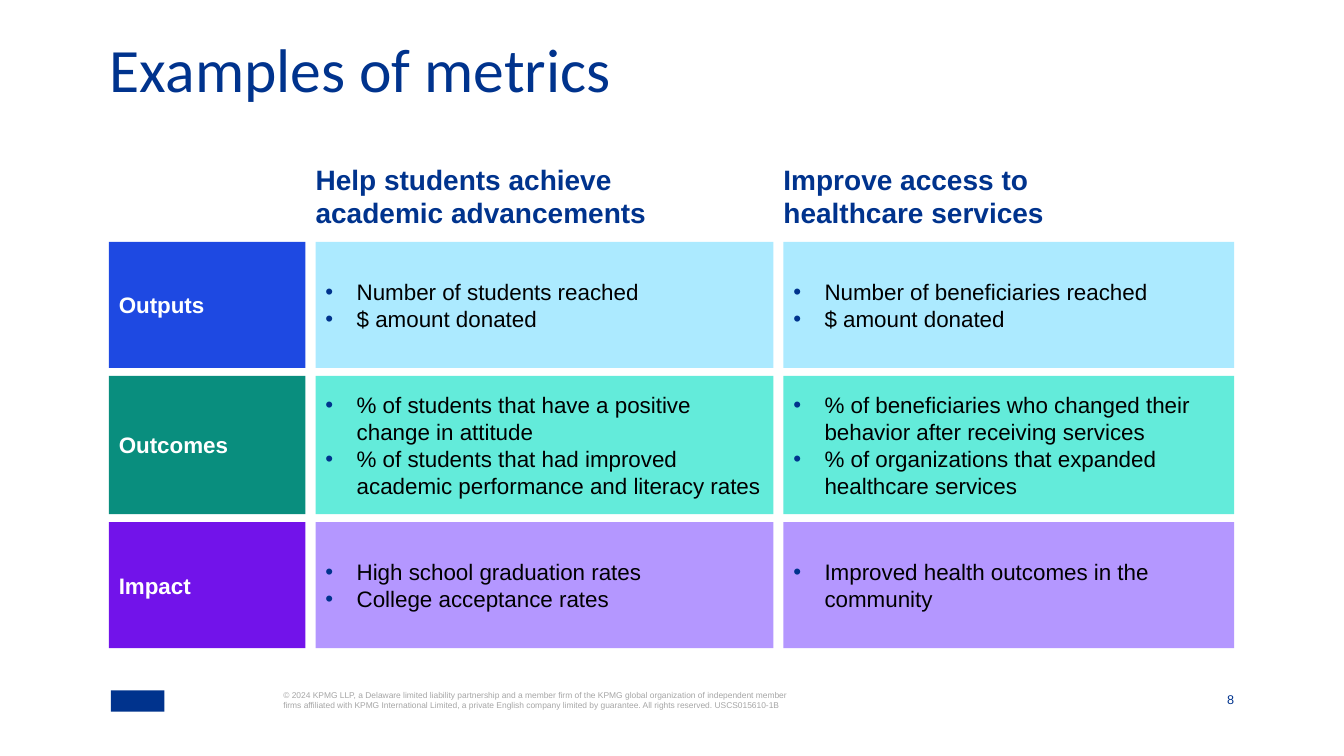
from lxml.etree import SubElement
from pptx import Presentation
from pptx.dml.color import RGBColor
from pptx.enum.shapes import MSO_SHAPE
from pptx.enum.text import MSO_ANCHOR, MSO_AUTO_SIZE, PP_ALIGN
from pptx.oxml.ns import qn
from pptx.util import Inches, Pt

COLORS = {
    "navy": "00338D", "grey": "A6A6A6", "white": "FFFFFF", "black": "000000",
    "blue": "1E49E2", "pale blue": "ACEAFF",
    "teal": "098E7E", "pale teal": "63EBDA",
    "purple": "7213EA", "pale purple": "B497FF",
}
STYLES = {
    "title": ({"name": "Calibri", "size": Pt(44), "bold": False}, "navy"),
    "heading": ({"name": "Arial", "size": Pt(20), "bold": True}, "navy"),
    "label": ({"name": "Arial", "size": Pt(16), "bold": True}, "white"),
    "item": ({"name": "Arial", "size": Pt(16), "bold": False}, "black"),
    "legal": ({"name": "Arial", "size": Pt(6), "bold": False}, "grey"),
    "number": ({"name": "Arial", "size": Pt(9), "bold": False}, "navy"),
}

# Grid of the metrics, in inches
COLUMNS = (1.95, 4.54, 4.47)
ROWS = (1.25, 1.37, 1.25)
COLUMN_GAP, ROW_GAP = 0.1, 0.08
HEADING_HEIGHT, HEADING_WIDTH = 0.79, 3.85
INDENT = Inches(0.31)

HEADINGS = (
    "Help students achieve academic advancements",
    "Improve access to healthcare services",
)
METRICS = (
    ("Outputs", "blue", "pale blue",
     ("Number of students reached", "$ amount donated"),
     ("Number of beneficiaries reached", "$ amount donated")),
    ("Outcomes", "teal", "pale teal",
     ("% of students that have a positive change in attitude",
      "% of students that had improved academic performance and literacy rates"),
     ("% of beneficiaries who changed their behavior after receiving services",
      "% of organizations that expanded healthcare services")),
    ("Impact", "purple", "pale purple",
     ("High school graduation rates", "College acceptance rates"),
     ("Improved health outcomes in the community",)),
)
LEGAL = (
    "© 2024 KPMG LLP, a Delaware limited liability partnership and a member firm "
    "of the KPMG global organization of independent member firms affiliated with "
    "KPMG International Limited, a private English company limited by guarantee. "
    "All rights reserved. USCS015610-1B"
)


def color(name):
    return RGBColor.from_string(COLORS[name])


def add_bullet(para):
    properties = para._p.get_or_add_pPr()
    properties.set("marL", str(INDENT))
    properties.set("indent", str(-INDENT))
    bullet_color = SubElement(properties, qn("a:buClr"))
    SubElement(bullet_color, qn("a:srgbClr"), val=COLORS["navy"])
    SubElement(properties, qn("a:buFont"), typeface="Arial")
    SubElement(properties, qn("a:buChar"), char="•")


def write(frame, lines, style, align=PP_ALIGN.LEFT, bullets=False):
    formats, color_name = STYLES[style]
    frame.word_wrap = True
    for index, line in enumerate(lines):
        para = frame.add_paragraph() if index else frame.paragraphs[0]
        para.alignment = align
        if bullets:
            add_bullet(para)
        span = para.add_run()
        span.text = line
        for name, value in formats.items():
            setattr(span.font, name, value)
        span.font.color.rgb = color(color_name)


def clear_margins(frame):
    for side in ("left", "top", "right", "bottom"):
        setattr(frame, f"margin_{side}", 0)


def add_text(page, box, text, style, anchor=MSO_ANCHOR.TOP, align=PP_ALIGN.LEFT):
    frame = page.shapes.add_textbox(*map(Inches, box)).text_frame
    clear_margins(frame)
    frame.vertical_anchor = anchor
    write(frame, [text], style, align)


def add_block(page, box, fill):
    block = page.shapes.add_shape(MSO_SHAPE.RECTANGLE, *map(Inches, box))
    block.shadow.inherit = False
    block.fill.solid()
    block.fill.fore_color.rgb = color(fill)
    block.line.fill.background()
    block.text_frame.vertical_anchor = MSO_ANCHOR.MIDDLE
    return block


def add_title(page, box, text):
    title = page.shapes.title
    for name, value in zip(("left", "top", "width", "height"), box):
        setattr(title, name, Inches(value))
    frame = title.text_frame
    clear_margins(frame)
    frame.auto_size = MSO_AUTO_SIZE.NONE
    frame.vertical_anchor = MSO_ANCHOR.MIDDLE
    write(frame, [text], "title")
    frame.paragraphs[0].line_spacing = 0.7


def add_metrics(page, left, top):
    lefts = [left + sum(COLUMNS[:n]) + n * COLUMN_GAP for n in range(len(COLUMNS))]
    # Column headings
    for x, heading in zip(lefts[1:], HEADINGS):
        add_text(page, (x, top, HEADING_WIDTH, HEADING_HEIGHT), heading, "heading")
    # One coloured row per kind of metric
    y = top + HEADING_HEIGHT
    for height, (label, dark, pale, *cells) in zip(ROWS, METRICS):
        block = add_block(page, (lefts[0], y, COLUMNS[0], height), dark)
        write(block.text_frame, [label], "label")
        for x, width, items in zip(lefts[1:], COLUMNS[1:], cells):
            block = add_block(page, (x, y, width, height), pale)
            write(block.text_frame, items, "item", bullets=True)
        y += height + ROW_GAP


def add_footer(page, left, top, width):
    add_block(page, (left, top, 0.53, 0.21), "navy")
    add_text(page, (left + 1.71, top, 5.1, 0.2), LEGAL, "legal")
    add_text(page, (left + width - 0.27, top, 0.27, 0.16), "8", "number",
             MSO_ANCHOR.BOTTOM, PP_ALIGN.RIGHT)


def main():
    deck = Presentation()
    deck.slide_width, deck.slide_height = Inches(13.33), Inches(7.5)
    page = deck.slides.add_slide(deck.slide_layouts[5])
    add_title(page, (1.09, 0.47, 11.16, 0.58), "Examples of metrics")
    add_metrics(page, 1.08, 1.61)
    add_footer(page, 1.1, 6.85, 11.14)
    deck.save("out.pptx")


if __name__ == "__main__":
    main()
